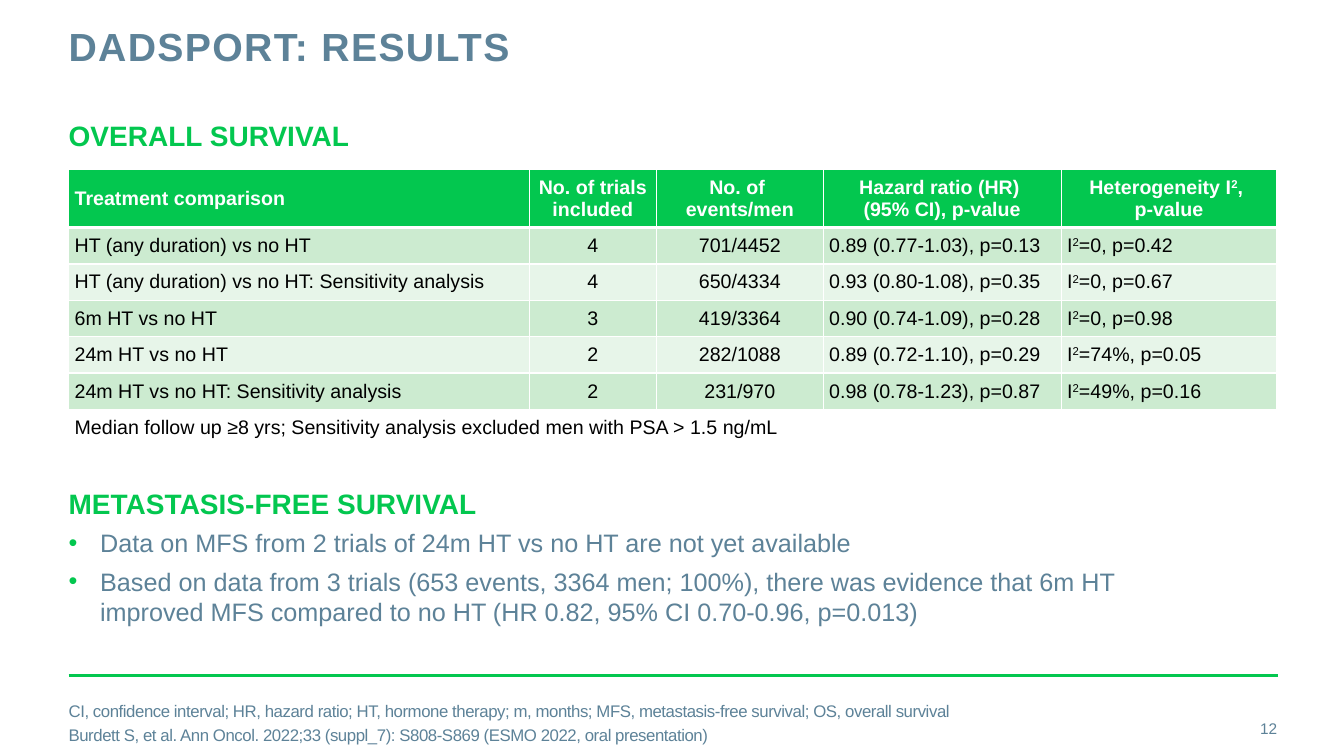
import dataclasses
import pptx
import pptx.dml.color
import pptx.enum.shapes
import pptx.enum.text
import pptx.oxml.ns
import pptx.util
import lxml.etree

Pt = pptx.util.Pt
Align = pptx.enum.text.PP_ALIGN
Anchor = pptx.enum.text.MSO_ANCHOR
qn = pptx.oxml.ns.qn


@dataclasses.dataclass
class Theme:
    font: str = "Arial"
    green: str = "03C74F"
    slate: str = "5D8298"
    white: str = "FFFFFF"
    black: str = "000000"
    bands: tuple = ("CCEBD0", "E7F5E9")
    title: int = 28
    head: int = 20
    body: int = 18
    cell: int = 14
    note: int = 12
    page: int = 11


def color(code):
    return pptx.dml.color.RGBColor.from_string(code)


class Deck:
    def __init__(self, theme):
        self.theme = theme
        self.file = pptx.Presentation()
        self.file.slide_width, self.file.slide_height = Pt(960), Pt(540)
        self.slide = self.file.slides.add_slide(self.file.slide_layouts[3])

    def text(self, par, words, size, code, bold=False, gap=0, form=None):
        """Words between ^ marks are raised; a newline breaks the line."""
        form = {"space_before": Pt(0), "space_after": Pt(0), **(form or {})}
        for name, value in form.items():
            setattr(par, name, value)
        look = {"name": self.theme.font, "size": Pt(size), "bold": bold}
        for i, part in enumerate(words.split("^")):
            for j, line in enumerate(part.split("\n")):
                if j:
                    par.add_line_break()
                    mark = lxml.etree.SubElement(par._p[-1], qn("a:rPr"))
                    mark.set("sz", str(size * 100))
                run = par.add_run()
                run.text = line
                for name, value in look.items():
                    setattr(run.font, name, value)
                run.font.color.rgb = color(code)
                props = run._r.get_or_add_rPr()
                if i % 2:
                    props.set("baseline", "30000")
                if gap:
                    props.set("spc", str(round(gap * 100)))

    def fit(self, shape, box, inset=(0, 0, 0, 0), anchor=Anchor.TOP, wrap=True):
        for name, value in zip(("left", "top", "width", "height"), box):
            setattr(shape, name, Pt(value))
        frame = shape.text_frame
        form = {"word_wrap": wrap, "vertical_anchor": anchor,
                "auto_size": pptx.enum.text.MSO_AUTO_SIZE.NONE}
        for side, value in zip(("left", "top", "right", "bottom"), inset):
            form["margin_" + side] = Pt(value)
        for name, value in form.items():
            setattr(frame, name, value)
        return frame

    def title(self, words, box):
        frame = self.fit(self.slide.shapes.title, box)
        self.text(frame.paragraphs[0], words, self.theme.title, self.theme.slate,
                  True, 1, {"alignment": Align.LEFT, "line_spacing": Pt(30)})

    def label(self, words, box, size, code, bold=False, form=None, **rest):
        shape = self.slide.shapes.add_textbox(*map(Pt, box))
        frame = self.fit(shape, box, anchor=Anchor.MIDDLE, **rest)
        self.text(frame.paragraphs[0], words, size, code, bold, form=form)

    def body(self, index, lines, box, size, inset=(0, 0, 0, 0), dot=False,
             space=0, gap=0):
        frame = self.fit(self.slide.placeholders[index], box, inset)
        for i, words in enumerate(lines):
            par = frame.add_paragraph() if i else frame.paragraphs[0]
            props = par._p.get_or_add_pPr()
            step = Pt(22.5) if dot else 0
            props.set("marL", str(step))
            props.set("indent", str(-step))
            if dot:
                tint = lxml.etree.SubElement(props, qn("a:buClr"))
                lxml.etree.SubElement(tint, qn("a:srgbClr")).set("val", self.theme.green)
                lxml.etree.SubElement(props, qn("a:buFont")).set("typeface", self.theme.font)
                lxml.etree.SubElement(props, qn("a:buChar")).set("char", "•")
            else:
                lxml.etree.SubElement(props, qn("a:buNone"))
            self.text(par, words, size, self.theme.slate, gap=gap,
                      form={"space_before": Pt(space if i else 0)})

    def rule(self, left, right, top):
        line = self.slide.shapes.add_connector(
            pptx.enum.shapes.MSO_CONNECTOR.STRAIGHT, Pt(left), Pt(top), Pt(right), Pt(top))
        line.line.color.rgb = color(self.theme.green)
        line.line.width = Pt(2)
        lxml.etree.SubElement(line._element.spPr, qn("a:effectLst"))

    def edge(self, cell, base):
        props = cell._tc.get_or_add_tcPr()
        for side, wide in (("L", 1), ("R", 1), ("T", 1), ("B", base)):
            line = lxml.etree.SubElement(props, qn("a:ln" + side))
            line.set("w", str(Pt(wide)))
            fill = lxml.etree.SubElement(line, qn("a:solidFill"))
            lxml.etree.SubElement(fill, qn("a:srgbClr")).set("val", self.theme.white)

    def table(self, rows, foot, left, top, cols, high, low):
        theme = self.theme
        count = len(rows)
        grid = self.slide.shapes.add_table(
            count + 1, len(cols), Pt(left), Pt(top), Pt(sum(cols)),
            Pt(high + low * count)).table
        grid.horz_banding = False
        for col, wide in zip(grid.columns, cols):
            col.width = Pt(wide)
        for i, row in enumerate(grid.rows):
            row.height = Pt(low if i else high)
        grid.cell(count, 0).merge(grid.cell(count, len(cols) - 1))
        form = {"margin_left": Pt(4.3), "margin_right": Pt(4.3), "margin_top": Pt(4.7),
                "margin_bottom": Pt(4.7), "vertical_anchor": Anchor.MIDDLE}
        for i, row in enumerate(rows + [[foot] + [""] * (len(cols) - 1)]):
            for j, words in enumerate(row):
                cell = grid.cell(i, j)
                self.edge(cell, 1 if i else 3)
                for name, value in form.items():
                    setattr(cell, name, value)
                if i == count:
                    cell.fill.background()
                else:
                    cell.fill.solid()
                    cell.fill.fore_color.rgb = color(
                        theme.bands[(i - 1) % 2] if i else theme.green)
                if words:
                    mid = j in (1, 2) or (i == 0 and j > 0)
                    self.text(cell.text_frame.paragraphs[0], words, theme.cell,
                              theme.black if i else theme.white, i == 0,
                              form={"alignment": Align.CENTER if mid else Align.LEFT})


def main():
    theme = Theme()
    deck = Deck(theme)
    left = 49

    # Title and base rule
    deck.rule(left, 913, 482.4)
    deck.title("DADSPORT: RESULTS", (left, 19.4, 688, 63.4))

    # Section heads
    for words, top, wide in (("OVERALL SURVIVAL", 80.6, 209.5),
                             ("METASTASIS-FREE SURVIVAL", 343.4, 301.7)):
        deck.label(words, (left, top, wide, 31.7), theme.head, theme.green,
                   bold=True, inset=(0, 3.6, 7.2, 3.6), wrap=False)

    # Survival table
    rows = [
        ["Treatment comparison", "No. of trials included", "No. of \nevents/men",
         "Hazard ratio (HR) \n(95% CI), p-value", "Heterogeneity I^2^, \np-value"],
        ["HT (any duration) vs no HT", "4", "701/4452",
         "0.89 (0.77-1.03), p=0.13", "I^2^=0, p=0.42"],
        ["HT (any duration) vs no HT: Sensitivity analysis", "4", "650/4334",
         "0.93 (0.80-1.08), p=0.35", "I^2^=0, p=0.67"],
        ["6m HT vs no HT", "3", "419/3364",
         "0.90 (0.74-1.09), p=0.28", "I^2^=0, p=0.98"],
        ["24m HT vs no HT", "2", "282/1088",
         "0.89 (0.72-1.10), p=0.29", "I^2^=74%, p=0.05"],
        ["24m HT vs no HT: Sensitivity analysis", "2", "231/970",
         "0.98 (0.78-1.23), p=0.87", "I^2^=49%, p=0.16"],
    ]
    deck.table(rows, "Median follow up ≥8 yrs; Sensitivity analysis excluded men with "
               "PSA > 1.5 ng/mL", left, 121, (329, 91, 119, 170, 154), 41.5, 26)

    # Findings
    deck.body(1, ["Data on MFS from 2 trials of 24m HT vs no HT are not yet available",
                  "Based on data from 3 trials (653 events, 3364 men; 100%), there was "
                  "evidence that 6m HT improved MFS compared to no HT (HR 0.82, "
                  "95% CI 0.70-0.96, p=0.013)"],
              (left, 373, 787, 78.5), theme.body, (0, 3.6, 7.2, 3.6), True, 6)

    # Footnotes and page number
    deck.body(2, ["CI, confidence interval; HR, hazard ratio; HT, hormone therapy; m, months; "
                  "MFS, metastasis-free survival; OS, overall survival",
                  "Burdett S, et al. Ann Oncol. 2022;33 (suppl_7): S808-S869 "
                  "(ESMO 2022, oral presentation)"],
              (left, 500.4, 639.4, 28.8), theme.note, space=3, gap=-0.3)
    deck.label("12", (850.3, 506.2, 62, 28.8), theme.page, theme.slate,
               form={"alignment": Align.RIGHT})

    deck.file.save("out.pptx")


if __name__ == "__main__":
    main()
